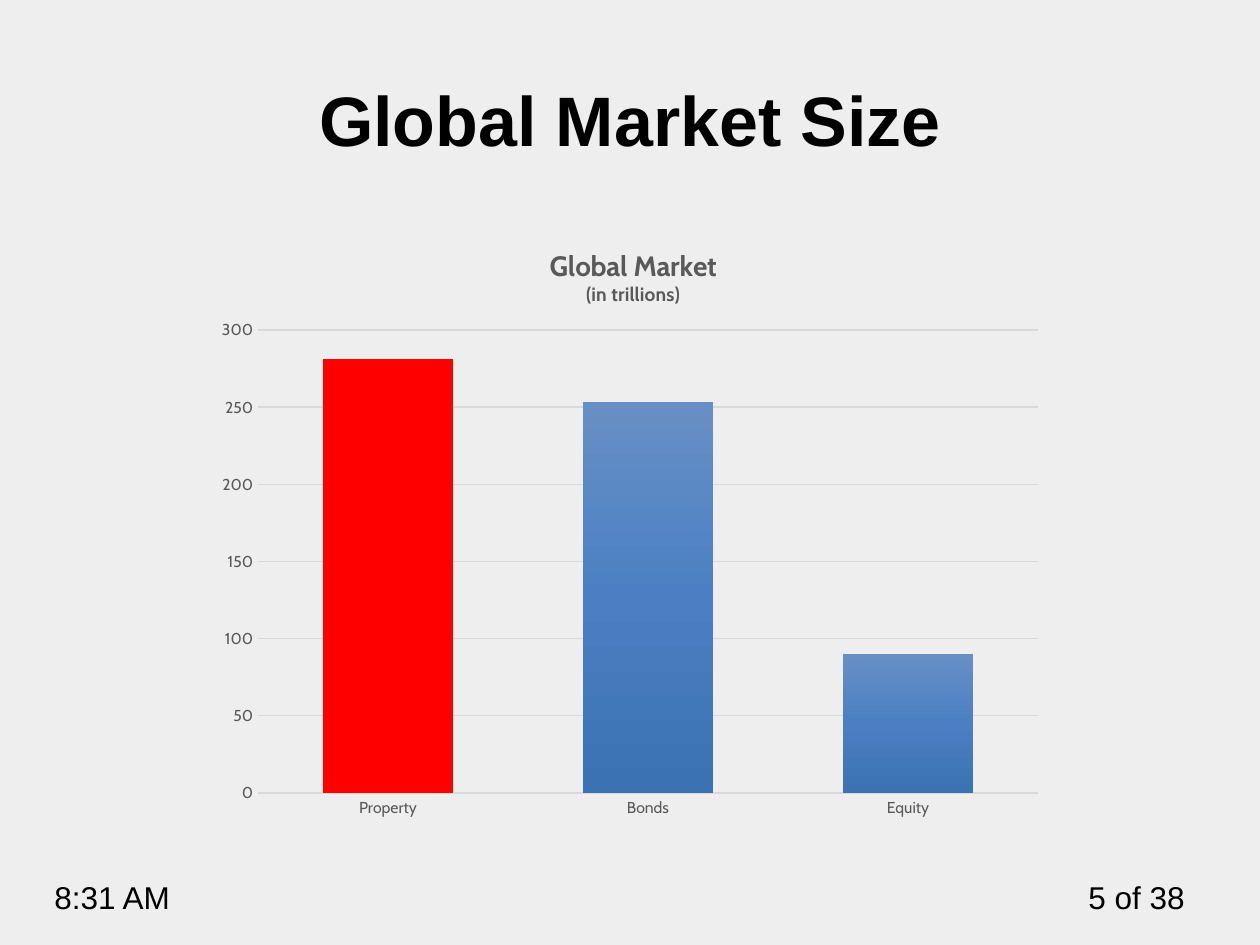
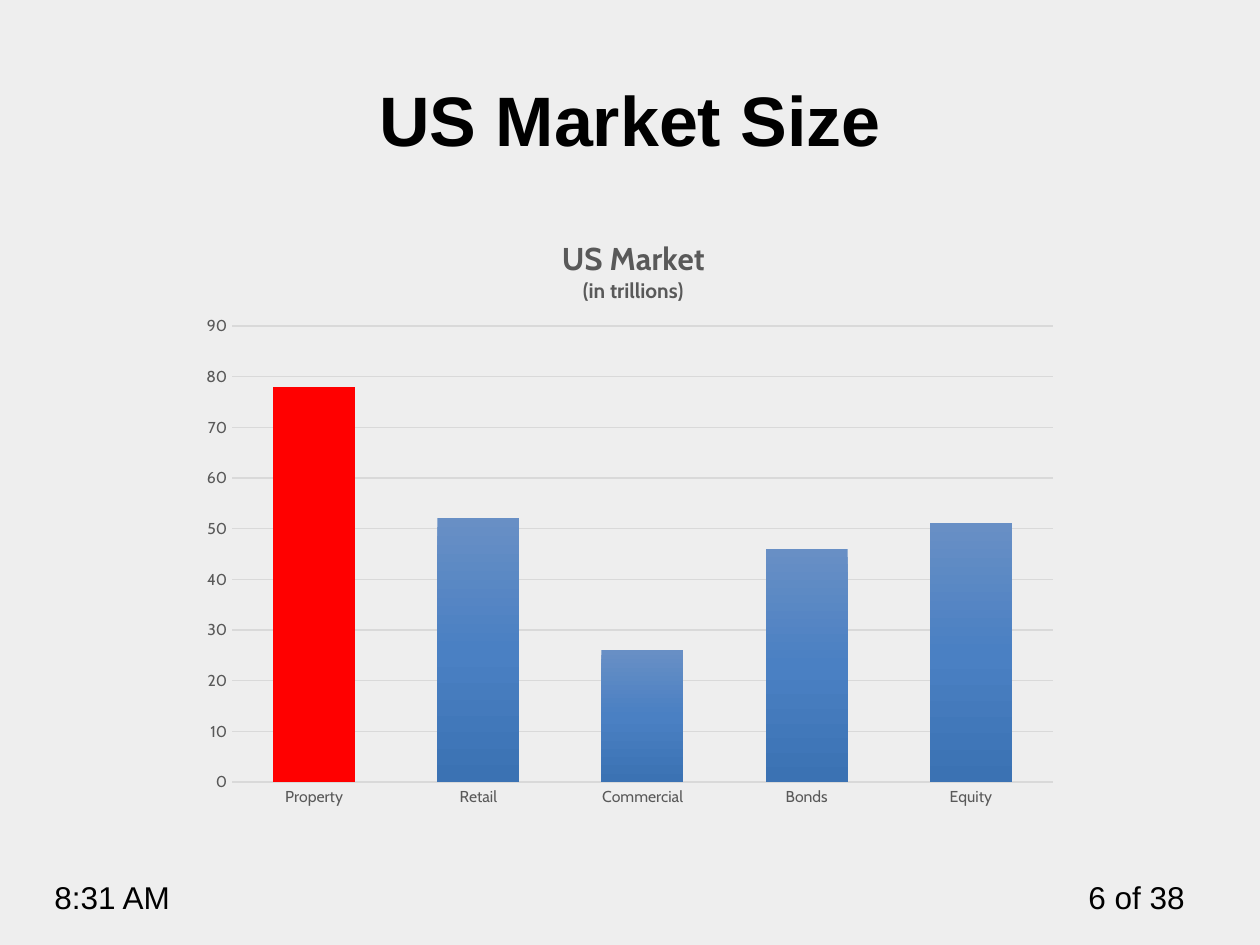
import copy
import dataclasses
import lxml.etree
import pptx
import pptx.chart.data
import pptx.dml.color
import pptx.enum.chart
import pptx.enum.text
import pptx.util


@dataclasses.dataclass(frozen=True)
class Theme:
    back: str = "EEEEEE"
    ink: str = "000000"
    grey: str = "595959"
    rule: str = "D9D9D9"
    mark: str = "FF0000"
    fade: tuple = ("688FC5", "4A80C3", "3B72B3")
    face: str = "Arial"
    plot: str = "Cabin"
    head: int = 40
    foot: int = 18
    tick: int = 9


theme = Theme()
rgb = pptx.dml.color.RGBColor.from_string
align = pptx.enum.text.PP_ALIGN
anchor = pptx.enum.text.MSO_ANCHOR
PX = 914400 / 126
WIDE, HIGH = 1260, 945


def write(para, text, size=theme.foot, color=theme.ink, face=theme.face, bold=False, side=align.LEFT):
    para.alignment = side
    run = para.add_run()
    run.text = text
    run.font.size = pptx.util.Pt(size)
    run.font.name = face
    run.font.bold = bold
    run.font.color.rgb = rgb(color)


def place(node, inner=False, **parts):
    old = node.find("{*}layout")
    if old is not None:
        node.remove(old)
    space = node.nsmap["c"]
    layout = lxml.etree.Element(f"{{{space}}}layout")
    manual = lxml.etree.SubElement(layout, f"{{{space}}}manualLayout")
    rows = [("layoutTarget", "inner")] if inner else []
    rows += [("xMode", "edge"), ("yMode", "edge")]
    rows += [(key, f"{part:.4f}") for key, part in parts.items()]
    for key, value in rows:
        lxml.etree.SubElement(manual, f"{{{space}}}{key}").set("val", value)
    node.insert(1 if node.find("{*}tx") is not None else 0, layout)


deck = pptx.Presentation()
deck.slide_width, deck.slide_height = round(WIDE * PX), round(HIGH * PX)
ground = deck.slide_master.background.fill
ground.solid()
ground.fore_color.rgb = rgb(theme.back)

pages = [
    dict(name="Global Market", box=(204, 220, 851, 609), plot=(258, 330, 780, 463),
         cap=(546, 244), sizes=(16, 11), top=300, step=50,
         data={"Property": 281, "Bonds": 253, "Equity": 90}),
    dict(name="US Market", box=(189, 210, 882, 609), plot=(232, 326, 821, 456),
         cap=(558, 234), sizes=(18, 12), top=90, step=10,
         data={"Property": 78, "Retail": 52, "Commercial": 26, "Bonds": 46, "Equity": 51}),
]

for number, page in enumerate(pages, 5):
    slide = deck.slides.add_slide(deck.slide_layouts[5])
    title = slide.shapes.title
    title.left, title.top, title.width, title.height = [round(n * PX) for n in (63, 49, 1134, 118)]
    title.text_frame.vertical_anchor = anchor.BOTTOM
    write(title.text_frame.paragraphs[0], f"{page['name']} Size", size=theme.head, bold=True, side=align.CENTER)

    for text, left, width, side in [("8:31 AM", 42, 199, align.LEFT), (f"{number} of 38", 1050, 147, align.RIGHT)]:
        foot = slide.shapes.add_textbox(*[round(n * PX) for n in (left, 872, width, 50)])
        foot.text_frame.word_wrap = True
        write(foot.text_frame.paragraphs[0], text, side=side)

    data = pptx.chart.data.CategoryChartData()
    data.categories = list(page["data"])
    data.add_series("Series 1", list(page["data"].values()))
    kind = pptx.enum.chart.XL_CHART_TYPE.COLUMN_CLUSTERED
    chart = slide.shapes.add_chart(kind, *[round(n * PX) for n in page["box"]], data).chart
    chart.has_legend = False
    chart.font.name = theme.plot
    chart.font.size = pptx.util.Pt(theme.tick)
    chart.font.color.rgb = rgb(theme.grey)

    frame = chart.chart_title.text_frame
    lines = [frame.paragraphs[0], frame.add_paragraph()]
    for para, text, size in zip(lines, (page["name"], "(in trillions)"), page["sizes"]):
        write(para, text, size=size, color=theme.grey, face=theme.plot, bold=True, side=align.CENTER)
    chart.chart_title.include_in_layout = False

    left, top, width, height = page["box"]
    x, y, w, h = page["plot"]
    area = chart.element.find(".//{*}plotArea")
    place(area, inner=True, x=(x - left) / width, y=(y - top) / height, w=w / width, h=h / height)
    x, y = page["cap"]
    place(chart.element.find(".//{*}title"), x=(x - left) / width, y=(y - top) / height)

    scale = chart.value_axis
    scale.minimum_scale, scale.maximum_scale, scale.major_unit = 0, page["top"], page["step"]
    scale.format.line.fill.background()
    grid = scale.major_gridlines.format.line
    grid.color.rgb = rgb(theme.rule)
    grid.width = pptx.util.Pt(0.75)
    base = chart.category_axis
    base.format.line.color.rgb = rgb(theme.rule)
    base.format.line.width = pptx.util.Pt(1)
    for axis in (scale, base):
        axis.major_tick_mark = axis.minor_tick_mark = pptx.enum.chart.XL_TICK_MARK.NONE
        axis.tick_labels.font.size = pptx.util.Pt(theme.tick)
        axis.tick_labels.font.name = theme.plot
        axis.tick_labels.font.color.rgb = rgb(theme.grey)

    bars = chart.plots[0]
    bars.vary_by_categories = False
    bars.gap_width, bars.overlap = 100, -24
    row = bars.series[0]
    row.invert_if_negative = False
    fill = row.format.fill
    fill.gradient()
    fill.gradient_angle = 270
    stops = row.format.element if hasattr(row.format, "element") else chart.element.find(".//{*}ser")
    stops = stops.find(".//{*}gsLst")
    stops.append(copy.deepcopy(stops[0]))
    for stop, color, at in zip(fill.gradient_stops, theme.fade, (0, 0.5, 1)):
        stop.color.rgb = rgb(color)
        stop.position = at
    first = row.points[0].format.fill
    first.solid()
    first.fore_color.rgb = rgb(theme.mark)

deck.save("out.pptx")
